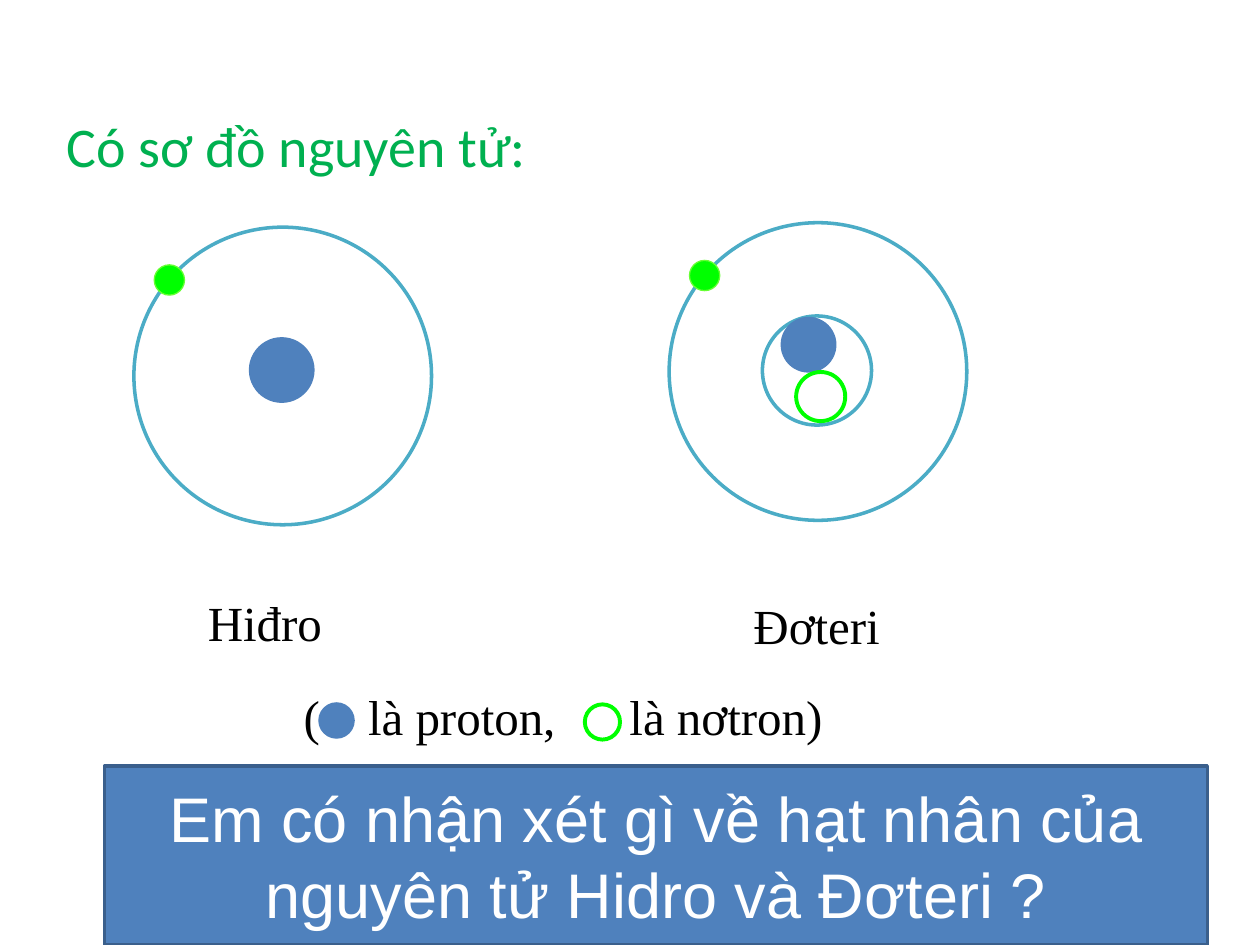
from lxml import etree
from pptx import Presentation
from pptx.dml.color import RGBColor
from pptx.enum import shapes, text
from pptx.oxml import ns
from pptx.util import Cm, Pt

# Content: lengths in centimetres, sizes in points
TITLE = ("Có sơ đồ nguyên tử:", (1.09, 2.13, 11.4, 1.63))
QUESTION = ("Em có nhận xét gì về hạt nhân của nguyên tử Hidro và Đơteri ?",
            (2.11, 15.44, 22.23, 3.61))
LABELS = [
    ("Hiđro", (3.94, 11.81, 3.58, 1.45)),
    ("Đơteri", (14.94, 11.89, 3.07, 1.45)),
]
LEGEND = ("(\tlà proton,\tlà nơtron)", (5.87, 13.72, 11.46, 1.45))
LEGEND_TABS = (1.3, 6.57)
LEGEND_PARTICLES = [("proton", 6.43, 14.17, 0.71), ("neutron", 11.79, 14.2, 0.71)]

# Particle styles: fill, line colour, line width
STYLES = {
    "orbit": ("FFFFFF", "4BACC6", 2),
    "electron": ("00FF00", "66FF33", 0.75),
    "proton": ("4F81BD", "4F81BD", 0.75),
    "neutron": (None, "00FF00", 2.25),
}

# Atoms: orbit corner, then particles as offset from that corner and diameter
ORBIT = ("orbit", 0, 0, 6)
ELECTRON = ("electron", 0.41, 0.76, 0.61)
ATOMS = [
    ((2.7, 4.58), [ORBIT, ("proton", 2.33, 2.23, 1.3), ELECTRON]),
    ((13.49, 4.49), [ORBIT, ("orbit", 1.88, 1.88, 2.2), ("proton", 2.26, 1.91, 1.1),
                     ELECTRON, ("neutron", 2.56, 3.01, 0.99)]),
]


def color(value):
    return RGBColor.from_string(value)


def add_shape(page, kind, place, fill, line, width):
    shape = page.shapes.add_shape(kind, *map(Cm, place))
    shape.shadow.inherit = False
    if fill:
        shape.fill.solid()
        shape.fill.fore_color.rgb = color(fill)
    else:
        shape.fill.background()
    shape.line.color.rgb = color(line)
    shape.line.width = Pt(width)
    return shape


def add_particle(page, style, left, top, size):
    add_shape(page, shapes.MSO_SHAPE.OVAL, (left, top, size, size), *STYLES[style])


def write(box, wording, size, font, ink, align=text.PP_ALIGN.LEFT,
          anchor=text.MSO_ANCHOR.TOP):
    frame = box.text_frame
    frame.word_wrap = True
    frame.auto_size = text.MSO_AUTO_SIZE.NONE
    frame.vertical_anchor = anchor
    para = frame.paragraphs[0]
    para.text = wording
    para.alignment = align
    for span in para.runs:
        span.font.size = Pt(size)
        span.font.name = font
        span.font.color.rgb = color(ink)
    return para


def add_text(page, wording, place):
    box = page.shapes.add_textbox(*map(Cm, place))
    return write(box, wording, 28, "Times New Roman", "000000")


def add_tabs(para, stops):
    tabs = etree.SubElement(para._p.get_or_add_pPr(), ns.qn("a:tabLst"))
    for stop in stops:
        etree.SubElement(tabs, ns.qn("a:tab"), pos=str(Cm(stop)), algn="l")


def main():
    deck = Presentation()
    deck.slide_width, deck.slide_height = Cm(25.4), Cm(19.05)
    page = deck.slides.add_slide(deck.slide_layouts[5])

    # Title
    wording, place = TITLE
    title = page.shapes.title
    title.left, title.top, title.width, title.height = map(Cm, place)
    write(title, wording, 32, "Calibri", "00B050")

    # Atoms and their names
    for (left, top), particles in ATOMS:
        for style, across, down, size in particles:
            add_particle(page, style, left + across, top + down, size)
    for label in LABELS:
        add_text(page, *label)

    # Legend
    add_tabs(add_text(page, *LEGEND), LEGEND_TABS)
    for particle in LEGEND_PARTICLES:
        add_particle(page, *particle)

    # Question
    wording, place = QUESTION
    banner = add_shape(page, shapes.MSO_SHAPE.RECTANGLE, place, "4F81BD", "3A5F8C", 2)
    write(banner, wording, 36, "Arial", "FFFFFF", text.PP_ALIGN.CENTER,
          text.MSO_ANCHOR.MIDDLE)

    deck.save("out.pptx")


if __name__ == "__main__":
    main()
